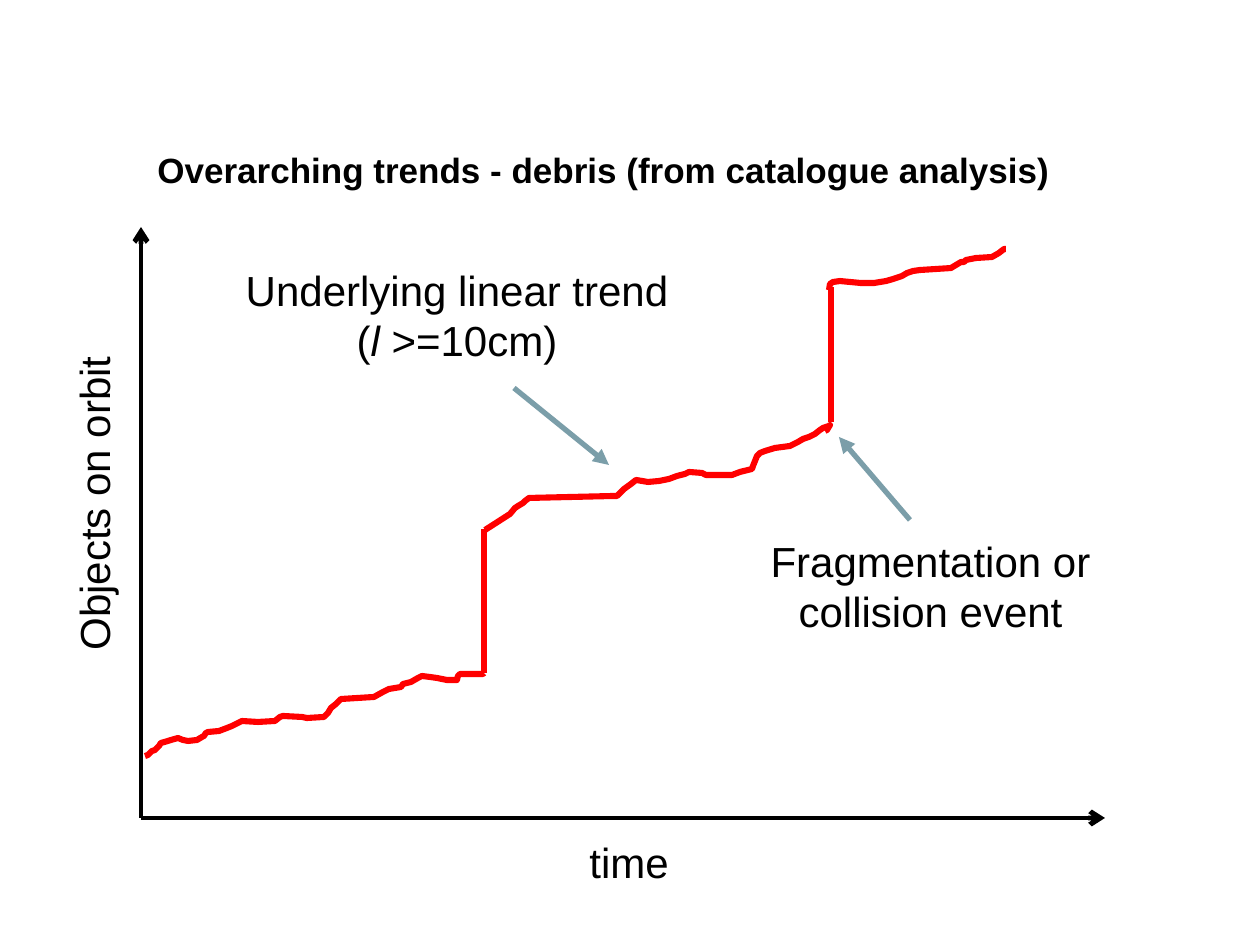
from pptx import Presentation
from pptx.dml.color import RGBColor
from pptx.enum.shapes import MSO_CONNECTOR
from pptx.enum.text import MSO_ANCHOR, MSO_AUTO_SIZE, PP_ALIGN
from pptx.oxml.ns import qn
from pptx.util import Pt
from lxml import etree

STRAIGHT = MSO_CONNECTOR.STRAIGHT
TOP = MSO_ANCHOR.TOP
LEFT, CENTER = PP_ALIGN.LEFT, PP_ALIGN.CENTER
GROW = MSO_AUTO_SIZE.SHAPE_TO_FIT_TEXT
NO_GROW = MSO_AUTO_SIZE.NONE

EMU_PER_PX = 914400 / 126
BLACK, RED, STEEL = "000000", "FF0000", "7B9EA9"
ORIGIN = (141, 818)

FIRST_TREND = [
    (145, 756), (148, 755), (152, 751), (155, 750), (159, 746), (161, 743),
    (168, 741), (171, 740), (178, 738), (183, 740), (188, 741), (197, 740),
    (202, 737), (204, 736), (206, 733), (208, 732), (219, 731), (227, 728),
    (232, 726), (242, 721), (258, 722), (275, 721), (280, 717), (283, 716),
    (302, 717), (307, 718), (324, 717), (328, 713), (331, 708), (336, 704),
    (341, 699), (374, 697), (383, 692), (389, 689), (401, 687), (403, 684),
    (411, 682), (418, 678), (422, 676), (430, 677), (437, 678), (447, 680),
    (457, 680), (458, 676), (460, 674), (470, 674), (483, 674), (484, 673),
]
SECOND_TREND = [
    (485, 530), (510, 514), (515, 508), (518, 506), (523, 503), (525, 501),
    (529, 498), (614, 496), (617, 496), (624, 489), (631, 484), (636, 480),
    (648, 482), (659, 481), (669, 479), (677, 476), (685, 474), (689, 472),
    (702, 473), (706, 475), (732, 475), (740, 472), (752, 469), (753, 466),
    (755, 461), (757, 456), (760, 453), (765, 451), (775, 448), (790, 446),
    (798, 442), (803, 439), (809, 437), (815, 434), (820, 430), (823, 428),
    (829, 426), (830, 425), (827, 430), (825, 431),
]
THIRD_TREND = [
    (829, 290), (830, 284), (833, 282), (840, 281), (861, 283), (874, 283),
    (886, 281), (893, 279), (902, 276), (907, 273), (913, 271), (920, 270),
    (951, 268), (956, 265), (961, 262), (964, 262), (966, 260), (976, 258),
    (992, 257), (999, 253), (1004, 249), (1006, 249),
]


def px(length):
    return round(length * EMU_PER_PX)


def color(hex_string):
    return RGBColor.from_string(hex_string)


def add_text(slide, lines, left, top, width, height, size=24, bold=False,
             align=LEFT, rotation=0, wrap=False):
    """Each line is a list of (text, italic) runs."""
    shape = slide.shapes.add_textbox(px(left), px(top), px(width), px(height))
    shape.rotation = rotation
    frame = shape.text_frame
    frame.word_wrap = wrap
    frame.auto_size = NO_GROW if wrap else GROW
    frame.vertical_anchor = TOP
    for index, line in enumerate(lines):
        paragraph = frame.add_paragraph() if index else frame.paragraphs[0]
        paragraph.alignment = align
        for text, italic in line:
            run = paragraph.add_run()
            run.text = text
            run.font.name = "Arial"
            run.font.size = Pt(size)
            run.font.bold = bold
            run.font.italic = italic
            run.font.color.rgb = color(BLACK)


def add_line(slide, start, end, line_color, width, head=None):
    connector = slide.shapes.add_connector(
        STRAIGHT, px(start[0]), px(start[1]), px(end[0]), px(end[1]))
    connector.line.color.rgb = color(line_color)
    connector.line.width = Pt(width)
    if head:
        outline = connector.line._get_or_add_ln()
        etree.SubElement(outline, qn("a:tailEnd"), type=head)
    etree.SubElement(connector._element.spPr, qn("a:effectLst"))


def add_trend(slide, points):
    builder = slide.shapes.build_freeform(*points[0], scale=EMU_PER_PX)
    builder.add_line_segments(points[1:], close=False)
    shape = builder.convert_to_shape()
    shape.shadow.inherit = False
    shape.fill.background()
    shape.line.color.rgb = color(RED)
    shape.line.width = Pt(3.5)
    etree.SubElement(shape.line._get_or_add_ln(), qn("a:round"))


def main():
    presentation = Presentation()
    presentation.slide_width, presentation.slide_height = px(1260), px(945)
    slide = presentation.slides.add_slide(presentation.slide_layouts[6])

    title = "Overarching trends - debris (from catalogue analysis)"
    add_text(slide, [[(title, False)]], 145, 142, 1203, 179,
             size=20, bold=True, wrap=True)

    for axis_end in ((1105, 818), (141, 227)):
        add_line(slide, ORIGIN, axis_end, BLACK, 2.75, head="arrow")
    for x, top, bottom in ((484, 529, 673), (831, 287, 422)):
        add_line(slide, (x, top), (x, bottom), RED, 3.5)
    for points in (FIRST_TREND, SECOND_TREND, THIRD_TREND):
        add_trend(slide, points)

    add_text(slide, [[("time", False)]], 577, 830, 106, 63)
    add_text(slide, [[("Objects on orbit", False)]], -68, 470, 323, 63,
             rotation=270)
    add_text(slide, [[("Fragmentation or", False)],
                     [("collision event", False)]],
             756, 529, 349, 115, align=CENTER)
    add_line(slide, (910, 520), (839, 437), STEEL, 3, head="triangle")
    add_text(slide, [[("Underlying linear trend", False)],
                     [("(", False), ("l ", True), (">=10cm)", False)]],
             231, 258, 452, 115, align=CENTER)
    add_line(slide, (514, 388), (609, 465), STEEL, 3, head="triangle")

    presentation.save("out.pptx")


if __name__ == "__main__":
    main()
